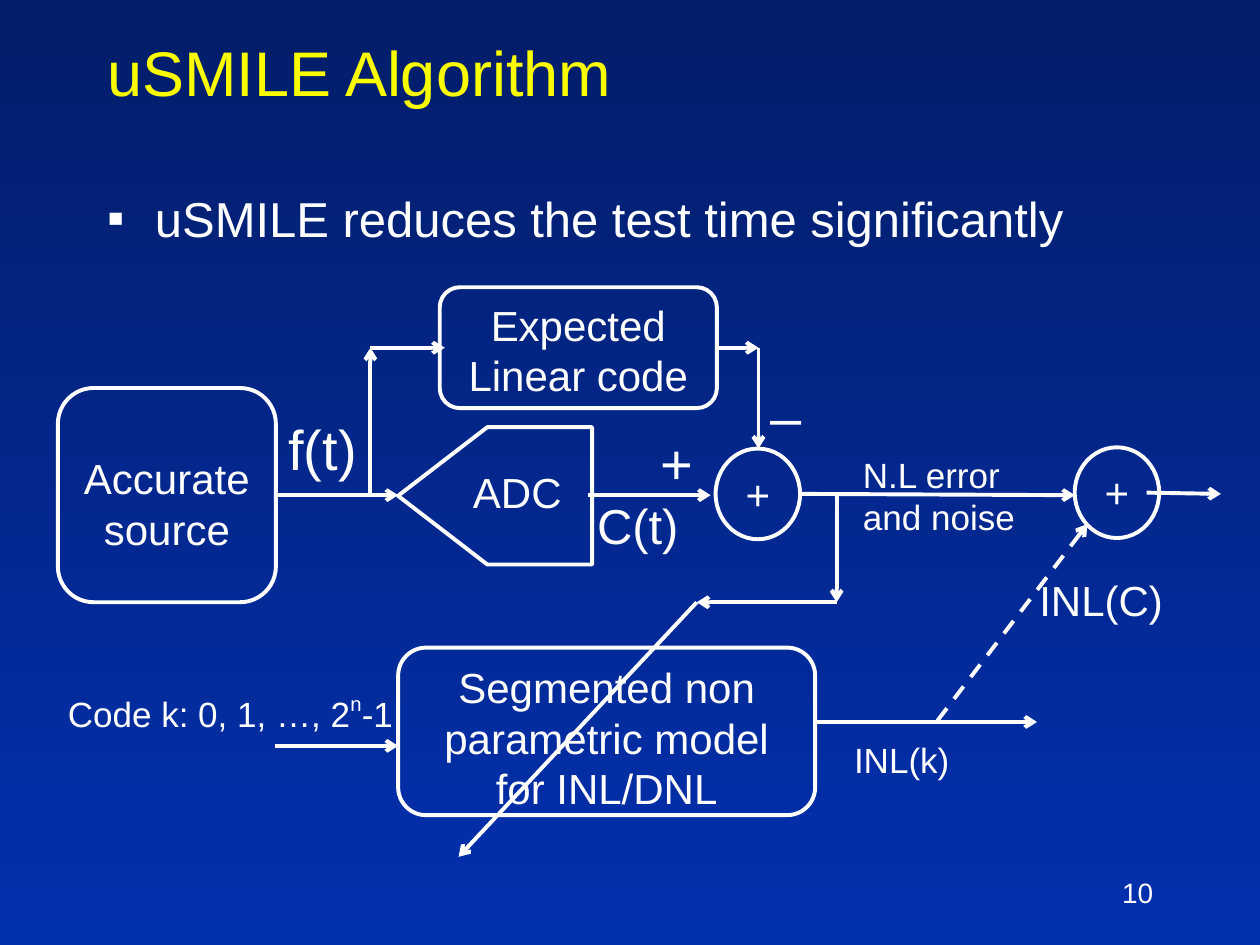
from dataclasses import dataclass
from typing import Any

from lxml import etree
from pptx import Presentation
from pptx import util as u
from pptx.dml.color import RGBColor
from pptx.enum import dml, shapes, text
from pptx.oxml.ns import qn

PX = 9144  # EMU: 100 px to the inch
WHITE = "FFFFFF"
YELLOW = "FAFD00"
LINE_WIDTH = u.Pt(2.25)


def px(*lengths):
    return [u.Emu(length * PX) for length in lengths]


def rgb(color):
    return RGBColor.from_string(color)


def write(frame, content, size, color=WHITE, align=text.PP_ALIGN.LEFT,
          anchor=text.MSO_ANCHOR.TOP, wrap=True, top_inset=5):
    """Lines become paragraphs; text between carets is superscript."""
    frame.auto_size = text.MSO_AUTO_SIZE.NONE
    frame.word_wrap = wrap
    frame.vertical_anchor = anchor
    frame.margin_left, frame.margin_top, frame.margin_right, frame.margin_bottom = px(10, top_inset, 10, 5)
    for number, line in enumerate(content.split("\n")):
        paragraph = frame.paragraphs[0] if number == 0 else frame.add_paragraph()
        paragraph.alignment = align
        for position, part in enumerate(line.split("^")):
            run = paragraph.add_run()
            run.text = part
            run.font.size = u.Pt(size)
            run.font.name = "Arial"
            run.font.color.rgb = rgb(color)
            if position % 2:
                run.font._element.set("baseline", "46000")


def place(shape, left, top, width, height):
    shape.left, shape.top, shape.width, shape.height = px(left, top, width, height)


@dataclass
class Region:
    """Part of the diagram whose coordinates start at left, top."""
    shapes: Any
    left: int
    top: int

    def box(self, left, top, width, height):
        return px(self.left + left, self.top + top, width, height)

    def block(self, content, bounds, kind=shapes.MSO_SHAPE.ROUNDED_RECTANGLE, top_inset=5):
        shape = self.shapes.add_shape(kind, *self.box(*bounds))
        shape.shadow.inherit = False
        shape.fill.background()
        shape.line.color.rgb = rgb(WHITE)
        shape.line.width = LINE_WIDTH
        write(shape.text_frame, content, 24, align=text.PP_ALIGN.CENTER, top_inset=top_inset)
        return shape

    def adder(self, left, top):
        self.block("+", (left, top, 67, 72), shapes.MSO_SHAPE.OVAL)

    def label(self, content, bounds, size, wrap=False):
        shape = self.shapes.add_textbox(*self.box(*bounds))
        write(shape.text_frame, content, size, wrap=wrap)

    def arrow(self, start, end, dashed=False):
        points = px(self.left + start[0], self.top + start[1], self.left + end[0], self.top + end[1])
        connector = self.shapes.add_connector(shapes.MSO_CONNECTOR.STRAIGHT, *points)
        connector.line.color.rgb = rgb(WHITE)
        connector.line.width = LINE_WIDTH
        if dashed:
            connector.line.dash_style = dml.MSO_LINE.DASH
        line = connector.line._get_or_add_ln()
        etree.SubElement(line, qn("a:tailEnd"), type="arrow")
        etree.SubElement(line.getparent(), qn("a:effectLst"))


def draw_source(region):
    region.block("Accurate source", (0, 0, 173, 170), top_inset=43)
    region.label("f(t)", (173, 16, 75, 64), 32)
    region.arrow((173, 85), (270, 85))
    region.arrow((248, 85), (248, -32))


def draw_conversion(region):
    """Expected code above the ADC, both feeding the first adder."""
    region.block("Expected\nLinear code", (33, 0, 220, 96))
    converter = region.block("ADC", (0, 111, 154, 109), shapes.MSO_SHAPE.PENTAGON, top_inset=31)
    converter.adjustments[0] = 0.65
    converter._element.spPr.find(qn("a:xfrm")).set("flipH", "1")
    region.label("C(t)", (148, 160, 86, 57), 28)
    region.label("+", (198, 107, 46, 64), 32)
    region.label("–", (286, 70, 45, 64), 32)
    region.arrow((-22, 48), (37, 48))
    region.arrow((252, 48), (286, 48))
    region.arrow((286, 48), (286, 128))
    region.arrow((151, 165), (248, 165))


def draw_error(region):
    region.adder(0, 1)
    region.adder(285, 0)
    region.label("N.L error\nand noise", (107, 0, 142, 77), 20)
    region.label("INL(C)", (247, 96, 119, 50), 24)
    region.arrow((67, 37), (285, 38))
    region.arrow((342, 36), (401, 37))
    region.arrow((96, 39), (96, 123))
    region.arrow((96, 123), (-15, 123))
    region.arrow((176, 217), (295, 61), dashed=True)


def draw_model(region):
    region.block("Segmented non parametric model for INL/DNL", (0, 0, 331, 133))
    region.label("Code k: 0, 1, …, 2^n^-1", (-272, 30, 294, 44), 20, wrap=True)
    region.label("INL(k)", (352, 67, 123, 44), 20, wrap=True)
    region.arrow((-98, 78), (0, 78))
    region.arrow((330, 59), (507, 59))
    region.arrow((237, -36), (48, 166))


def draw_background(slide):
    fill = slide.background.fill
    fill.gradient()
    fill.gradient_angle = 270
    for stop, position, color in zip(fill.gradient_stops, (0, 1), ("021D69", "0330AF")):
        stop.position = position
        stop.color.rgb = rgb(color)


def draw_text(slide):
    title, body = slide.placeholders
    place(title, 75, 25, 850, 67)
    write(title.text_frame, "uSMILE Algorithm", 36, YELLOW, anchor=text.MSO_ANCHOR.BOTTOM)

    place(body, 75, 133, 850, 539)
    write(body.text_frame, "uSMILE reduces the test time significantly", 28)
    paragraph = body.text_frame.paragraphs[0]
    paragraph.line_spacing = 1.25
    paragraph.space_before = u.Pt(5.6)
    properties = paragraph._p.get_or_add_pPr()
    properties.set("marL", str(38 * PX))
    properties.set("indent", str(-38 * PX))
    etree.SubElement(properties, qn("a:buFont"), typeface="Arial")
    etree.SubElement(properties, qn("a:buChar"), char="▪")

    number = slide.shapes.add_textbox(*px(717, 683, 208, 50))
    write(number.text_frame, "10", 16, align=text.PP_ALIGN.RIGHT, anchor=text.MSO_ANCHOR.MIDDLE)


def main():
    presentation = Presentation()
    presentation.slide_width, presentation.slide_height = px(1000, 750)
    slide = presentation.slides.add_slide(presentation.slide_layouts[1])
    draw_background(slide)
    draw_text(slide)
    diagram = slide.shapes.add_group_shape().shapes
    draw_source(Region(diagram, 46, 308))
    draw_conversion(Region(diagram, 316, 228))
    draw_error(Region(diagram, 568, 355))
    draw_model(Region(diagram, 316, 514))
    presentation.save("out.pptx")


if __name__ == "__main__":
    main()
